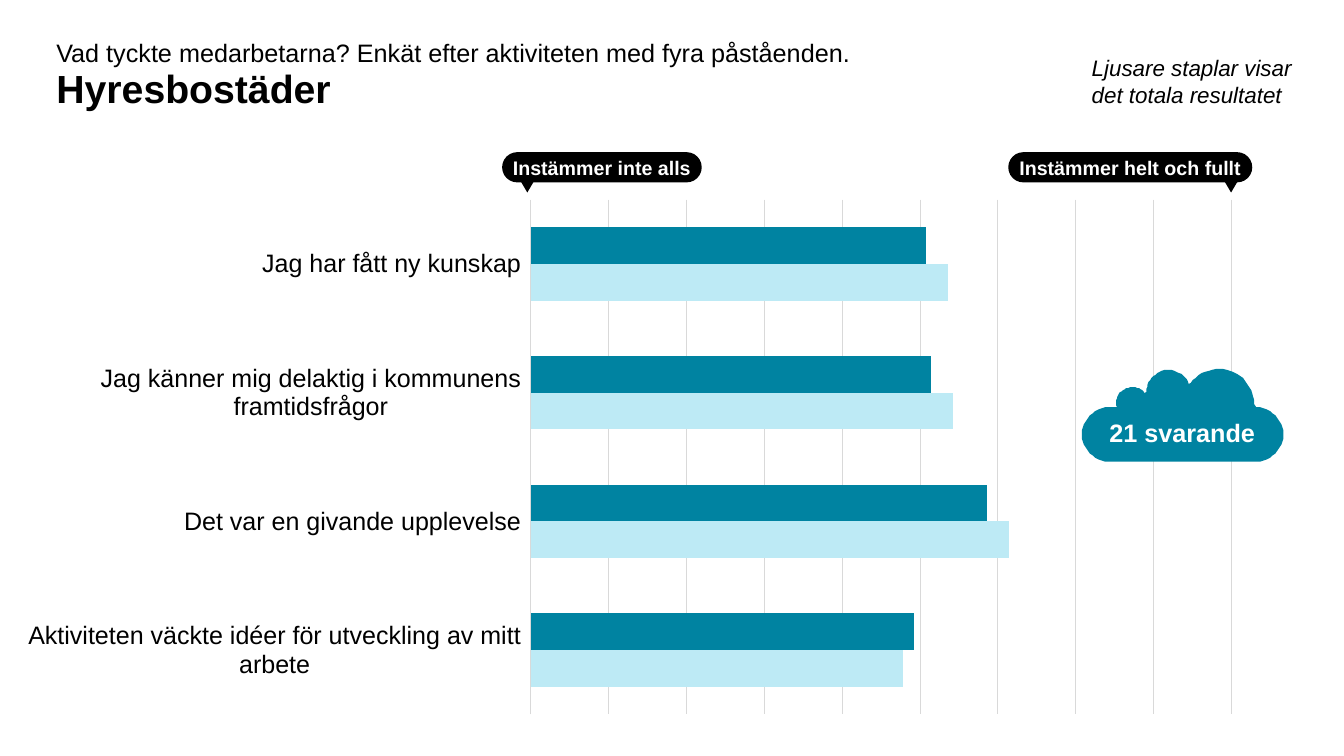
from dataclasses import dataclass
from math import cos, radians, sin

from pptx import Presentation
from pptx.chart.data import CategoryChartData
from pptx.dml.color import RGBColor
from pptx.enum.chart import XL_CHART_TYPE, XL_TICK_LABEL_POSITION, XL_TICK_MARK
from pptx.enum.shapes import MSO_SHAPE
from pptx.enum.text import MSO_ANCHOR, MSO_AUTO_SIZE, PP_ALIGN
from pptx.oxml import parse_xml
from pptx.oxml.ns import nsdecls, qn
from pptx.util import Pt

BAR = XL_CHART_TYPE.BAR_CLUSTERED
NO_TICK = XL_TICK_MARK.NONE
LABELS_LOW = XL_TICK_LABEL_POSITION.LOW
PILL, TRIANGLE = MSO_SHAPE.ROUNDED_RECTANGLE, MSO_SHAPE.ISOSCELES_TRIANGLE
TOP, MIDDLE = MSO_ANCHOR.TOP, MSO_ANCHOR.MIDDLE
LEFT, CENTER = PP_ALIGN.LEFT, PP_ALIGN.CENTER
NO_FIT = MSO_AUTO_SIZE.NONE

PX = 9144  # 100 px to the inch


@dataclass(frozen=True)
class Theme:
    font: str = "Arial"
    black: str = "000000"
    white: str = "FFFFFF"
    grid: str = "D9D9D9"
    teal: str = "0083A1"
    light: str = "BDEAF5"
    title: int = 28
    body: int = 18
    note: int = 16
    label: int = 14


T = Theme()

STATEMENTS = [
    "Jag har fått ny kunskap",
    "Jag känner mig delaktig i kommunens framtidsfrågor",
    "Det var en givande upplevelse",
    "Aktiviteten väckte idéer för utveckling av mitt arbete",
]
RESULTS = [
    ("Hyresbostäder", [85, 86, 96, 83], T.teal),
    ("Totalt", [89, 90, 100, 81], T.light),
]


def px(*lengths):
    return [n * PX for n in lengths]


def rgb(code):
    return RGBColor.from_string(code)


def format_font(font, size, color=T.black, bold=False, italic=False):
    font.name, font.size, font.bold, font.italic = T.font, Pt(size), bold, italic
    font.color.rgb = rgb(color)


def write(sp, text, size, align=LEFT, anchor=MIDDLE, wrap=True, spacing=None, **style):
    tf = sp.text_frame
    tf.word_wrap, tf.auto_size, tf.vertical_anchor = wrap, NO_FIT, anchor
    p = tf.paragraphs[0]
    p.alignment, p.line_spacing = align, spacing
    r = p.add_run()
    r.text = text
    format_font(r.font, size, **style)


def paint(sp, color):
    sp.fill.solid()
    sp.fill.fore_color.rgb = rgb(color)
    sp.line.fill.background()
    sp.shadow.inherit = False


def add_heading(s, x, y, w, h):
    title = s.shapes.title
    title.left, title.top, title.width, title.height = px(x, y + 19, w, h)
    write(title, "Hyresbostäder", T.title, spacing=0.9, bold=True)
    intro = s.shapes.add_textbox(*px(x, y, 1249, 27))
    write(intro, "Vad tyckte medarbetarna? Enkät efter aktiviteten med fyra påståenden.", T.body)


def add_chart(s, x, y, w, h):
    data = CategoryChartData()
    data.categories = STATEMENTS
    for name, values, _ in RESULTS:
        data.add_series(name, values)
    chart = s.shapes.add_chart(BAR, *px(x, y, w, h), data).chart
    chart.has_legend = chart.has_title = False
    format_font(chart.font, T.label)

    # Bars
    plot = chart.plots[0]
    plot.gap_width, plot.overlap, plot.vary_by_categories = 150, 0, False
    for series, (_, _, color) in zip(plot.series, RESULTS):
        series.format.fill.solid()
        series.format.fill.fore_color.rgb = rgb(color)

    # Axes
    cats, vals = chart.category_axis, chart.value_axis
    cats.reverse_order = True
    cats.major_tick_mark = cats.minor_tick_mark = NO_TICK
    cats.tick_label_position = LABELS_LOW
    format_font(cats.tick_labels.font, T.body)
    vals.visible = False
    vals.minimum_scale, vals.maximum_scale, vals.major_unit = 14, 140, 14
    vals.has_major_gridlines = True
    for line in (cats.format.line, vals.major_gridlines.format.line):
        line.color.rgb = rgb(T.grid)
        line.width = Pt(0.75)

    # Inner plot area as fractions of the chart
    area = chart.plots[0]._element.getparent()
    for old in area.findall(qn("c:layout")):
        area.remove(old)
    place = "".join(f'<c:{k} val="{v}"/>' for k, v in [
        ("layoutTarget", "inner"), ("xMode", "edge"), ("yMode", "edge"),
        ("x", 0.405), ("y", 0.028), ("w", 0.573), ("h", 0.944)])
    area.insert(0, parse_xml(
        f'<c:layout {nsdecls("c")}><c:manualLayout>{place}</c:manualLayout></c:layout>'))


def add_scale_label(s, text, x, y, w, h, pointer):
    shapes = s.shapes.add_group_shape().shapes
    pill = shapes.add_shape(PILL, *px(x, y, w, h))
    pill.adjustments[0] = 0.5
    tip = shapes.add_shape(TRIANGLE, *px(x + pointer, y + 23, 20, 17))
    tip.rotation = 180
    for sp in (pill, tip):
        paint(sp, T.black)
    box = shapes.add_textbox(*px(x, y - 1, w, h + 4))
    write(box, text, T.label, CENTER, TOP, wrap=False, color=T.white, bold=True)


def add_cloud(s, text, x, y, w, h):
    cap = 27
    base = h - cap
    # Centre, radius, start and end angle, from right to left and round the base
    arcs = [
        (136, 35, 35, 0, 143),
        (86, 23, 22, 22, 180),
        (50, 34, 16, 40, 195),
        (cap, base, cap, 90, 270),
        (w - cap, base, cap, 270, 450),
    ]
    points = []
    for cx, cy, radius, start, end in arcs:
        for step in range(25):
            a = radians(start + (end - start) * step / 24)
            points.append((x + cx + radius * cos(a), y + cy - radius * sin(a)))
    outline = s.shapes.build_freeform(*points[0], scale=PX)
    outline.add_line_segments(points[1:], close=True)
    paint(outline.convert_to_shape(), T.teal)
    box = s.shapes.add_textbox(*px(x - 28, y + 43, w + 55, 40))
    write(box, text, T.body, CENTER, color=T.white, bold=True)


def add_survey_slide(prs):
    s = prs.slides.add_slide(prs.slide_layouts[5])
    add_heading(s, 46, 39, 1107, 64)
    add_chart(s, 28, 183, 1220, 541)
    note = s.shapes.add_textbox(*px(1073, 51, 246, 59))
    write(note, "Ljusare staplar visar det totala resultatet", T.note, italic=True)
    add_scale_label(s, "Instämmer helt och fullt", 1000, 151, 242, 30, pointer=211)
    add_scale_label(s, "Instämmer inte alls", 498, 151, 198, 30, pointer=15)
    add_cloud(s, "21 svarande", 1073, 366, 200, 92)


def main():
    prs = Presentation()
    prs.slide_width, prs.slide_height = px(1333, 750)
    add_survey_slide(prs)
    prs.save("out.pptx")


if __name__ == "__main__":
    main()
